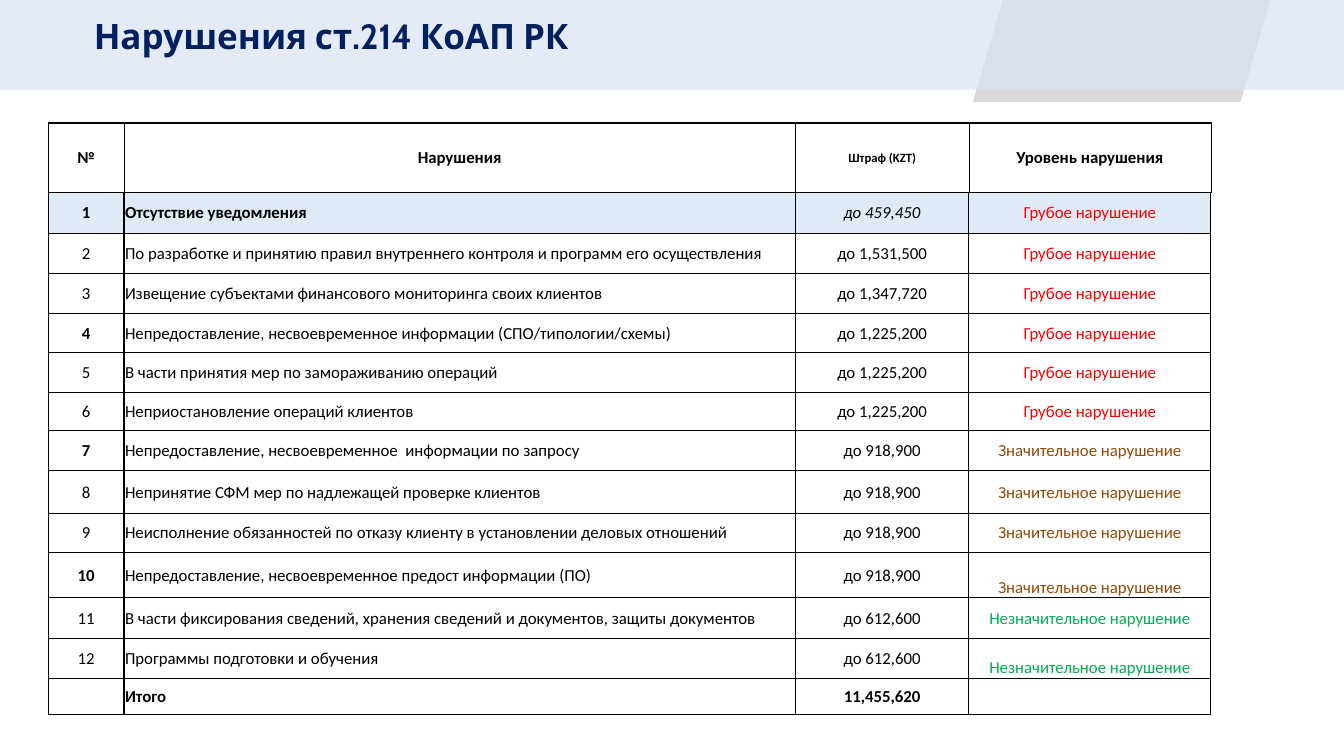
from lxml.etree import SubElement
from pptx import Presentation
from pptx.dml.color import RGBColor
from pptx.enum.shapes import MSO_SHAPE as Shape
from pptx.enum.text import MSO_ANCHOR as Anchor, MSO_AUTO_SIZE as AutoSize, PP_ALIGN as Align
from pptx.oxml.ns import qn
from pptx.util import Inches, Pt

BLACK, NAVY, ROW_BLUE = "000000", "002060", "DEEBF7"
LEVEL_COLORS = {
    "Грубое нарушение": "FF0000",
    "Значительное нарушение": "974807",
    "Незначительное нарушение": "00B050",
}
GROSS, SIGNIFICANT, MINOR = LEVEL_COLORS
HEADER = ("№", "Нарушения", "Штраф (KZT)", "Уровень нарушения")
VIOLATIONS = [
    ("Отсутствие уведомления", "459,450", GROSS),
    ("По разработке и принятию правил внутреннего контроля и программ его осуществления",
     "1,531,500", GROSS),
    ("Извещение субъектами финансового мониторинга своих клиентов", "1,347,720", GROSS),
    ("Непредоставление, несвоевременное информации (СПО/типологии/схемы)", "1,225,200", GROSS),
    ("В части принятия мер по замораживанию операций", "1,225,200", GROSS),
    ("Неприостановление операций клиентов", "1,225,200", GROSS),
    ("Непредоставление, несвоевременное  информации по запросу", "918,900", SIGNIFICANT),
    ("Непринятие СФМ мер по надлежащей проверке клиентов", "918,900", SIGNIFICANT),
    ("Неисполнение обязанностей по отказу клиенту в установлении деловых отношений",
     "918,900", SIGNIFICANT),
    ("Непредоставление, несвоевременное предост информации (ПО)", "918,900", SIGNIFICANT),
    ("В части фиксирования сведений, хранения сведений и документов, защиты документов",
     "612,600", MINOR),
    ("Программы подготовки и обучения", "612,600", MINOR),
]
TOTAL = ("", "Итого", "11,455,620", "")
COLUMN_WIDTHS = (0.75, 6.66, 1.72, 2.4)
ROW_HEIGHTS = (0.69, 0.4, 0.4, 0.4, 0.39, 0.39, 0.38, 0.4, 0.42, 0.39, 0.45, 0.4, 0.4, 0.36)
BOLD_NUMBERS = (1, 4, 7, 10)
LOW_LEVEL_ROWS = (10, 12)


def color(value):
    return RGBColor.from_string(value)


def write(para, text, align, **formats):
    """Write one run, with the font values given by name."""
    para.alignment = align
    span = para.add_run()
    span.text = text
    span.font.color.rgb = color(formats.pop("color"))
    for name, value in formats.items():
        setattr(span.font, name, value)


def add_block(slide, kind, box, fill):
    block = slide.shapes.add_shape(kind, *map(Inches, box))
    block.shadow.inherit = False
    block.fill.solid()
    block.fill.fore_color.rgb = color(fill)
    block.line.fill.background()
    return block


def add_header(slide, box):
    left, top, width, height = box
    # Slanted accent behind the translucent band
    accent = add_block(slide, Shape.PARALLELOGRAM,
                       (left + 9.65, top, 2.95, height + 0.12), "D9D9D9")
    accent.adjustments[0] = 0.293
    band = add_block(slide, Shape.RECTANGLE, box, "DAE3F3")
    tint = band.fill._xPr.find(qn("a:solidFill"))[0]
    SubElement(tint, qn("a:alpha"), val="70000")

    # Title, brought in front of the band
    title = slide.shapes.title
    slide.shapes.element.append(title.element)
    place = {"left": left + 0.83, "top": top + 0.09, "width": 10.44, "height": 0.52}
    for name, value in place.items():
        setattr(title, name, Inches(value))
    frame = title.text_frame
    frame.word_wrap = True
    frame.auto_size = AutoSize.SHAPE_TO_FIT_TEXT
    frame.vertical_anchor = Anchor.TOP
    write(frame.paragraphs[0], "Нарушения ст.214 КоАП РК", Align.LEFT,
          name="Cabin", size=Pt(25), bold=True, color=NAVY)


def set_borders(cell, widths):
    """Draw black borders; widths are points for left, right, top, bottom."""
    properties = cell._tc.get_or_add_tcPr()
    for index, (side, width) in enumerate(zip("LRTB", widths)):
        line = SubElement(properties, qn(f"a:ln{side}"), w=str(Pt(width)))
        properties.insert(index, line)
        fill = SubElement(line, qn("a:solidFill"))
        SubElement(fill, qn("a:srgbClr"), val=BLACK)


def format_cell(cell, row, column, text):
    last = len(ROW_HEIGHTS) - 1
    margins = {"margin_left": 0.01, "margin_right": 0.01, "margin_top": 0.01, "margin_bottom": 0}
    for name, value in margins.items():
        setattr(cell, name, Inches(value))
    low = column == 3 and row in LOW_LEVEL_ROWS
    cell.vertical_anchor = Anchor.BOTTOM if low else Anchor.MIDDLE

    if row == 1:
        cell.fill.solid()
        cell.fill.fore_color.rgb = color(ROW_BLUE)
    else:
        cell.fill.background()
    side = 0.5 if row == 0 else 1
    set_borders(cell, (1 if column == 0 else side, side,
                       1 if row < 2 else 0.5, 1 if row in (0, last) else 0.5))

    if text:
        bold = (row in (0, last) or (column == 0 and row in BOLD_NUMBERS)
                or (row, column) == (1, 1))
        write(cell.text_frame.paragraphs[0], text,
              Align.LEFT if column == 1 and row else Align.CENTER,
              name="Calibri", size=Pt(9 if (row, column) == (0, 2) else 12),
              bold=bold, italic=(row, column) == (1, 2),
              color=LEVEL_COLORS.get(text, BLACK))


def add_violations(slide, box):
    rows = [HEADER]
    for number, (violation, fine, level) in enumerate(VIOLATIONS, 1):
        rows.append((str(number), violation, f"до {fine}", level))
    rows.append(TOTAL)

    table = slide.shapes.add_table(len(rows), len(HEADER), *map(Inches, box)).table
    table.first_row = table.horz_banding = False
    for column, width in zip(table.columns, COLUMN_WIDTHS):
        column.width = Inches(width)
    for row, height in zip(table.rows, ROW_HEIGHTS):
        row.height = Inches(height)
    for row, texts in enumerate(rows):
        for column, text in enumerate(texts):
            format_cell(table.cell(row, column), row, column, text)


def main():
    deck = Presentation()
    deck.slide_width, deck.slide_height = Inches(13.33), Inches(7.5)
    slide = deck.slides.add_slide(deck.slide_layouts[5])
    add_header(slide, (0, 0, 13.33, 0.89))
    add_violations(slide, (0.48, 1.22, sum(COLUMN_WIDTHS), sum(ROW_HEIGHTS)))
    deck.save("out.pptx")


if __name__ == "__main__":
    main()
